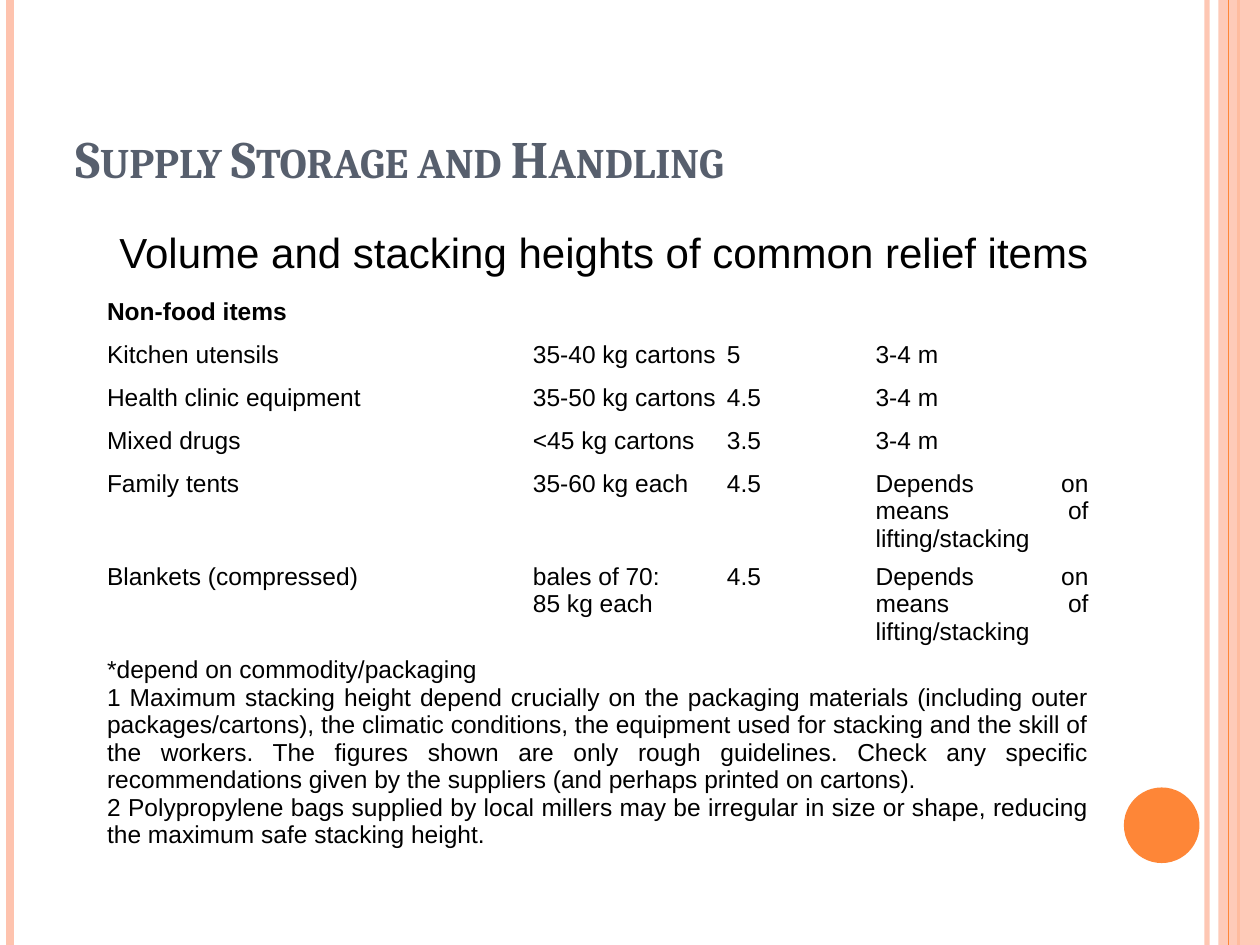
from lxml import etree
from pptx import Presentation
from pptx.dml.color import RGBColor
from pptx.enum.shapes import MSO_CONNECTOR, MSO_SHAPE
from pptx.enum.text import MSO_ANCHOR, PP_ALIGN
from pptx.oxml.ns import qn
from pptx.util import Inches, Pt

LINE = MSO_CONNECTOR.STRAIGHT
RECT, OVAL = MSO_SHAPE.RECTANGLE, MSO_SHAPE.OVAL
TOP, BOTTOM = MSO_ANCHOR.TOP, MSO_ANCHOR.BOTTOM
JUSTIFY = PP_ALIGN.JUSTIFY
PEACH = RGBColor(0xFE, 0xC3, 0xAE)
ORANGE = RGBColor(0xFE, 0x86, 0x37)
SLATE = RGBColor(0x57, 0x5F, 0x6D)
BLACK = RGBColor(0, 0, 0)
WIDE, HIGH = 10, 7.5

# Content
TITLE = "Supply Storage and Handling"
LEAD = "Volume and stacking heights of common relief items"
STACK = "Depends on means of lifting/stacking"
NOTES = [
    "*depend on commodity/packaging",
    "1 Maximum stacking height depend crucially on the packaging materials "
    "(including outer packages/cartons), the climatic conditions, the equipment "
    "used for stacking and the skill of the workers. The figures shown are only "
    "rough guidelines. Check any specific recommendations given by the suppliers "
    "(and perhaps printed on cartons).",
    "2 Polypropylene bags supplied by local millers may be irregular in size or "
    "shape, reducing the maximum safe stacking height.",
]
# One-entry rows span the whole table
ROWS = [
    ["Non-food items"],
    ["Kitchen utensils", "35-40 kg cartons", "5", "3-4 m"],
    ["Health clinic equipment", "35-50 kg cartons", "4.5", "3-4 m"],
    ["Mixed drugs", "<45 kg cartons", "3.5", "3-4 m"],
    ["Family tents", "35-60 kg each", "4.5", STACK],
    ["Blankets (compressed)", "bales of 70:\n85 kg each", "4.5", STACK],
    ["\n".join(NOTES)],
]
COLS = [3.38, 1.54, 1.18, 1.73]
TALL = [0.34] * 4 + [0.62] * 2 + [1.71]

# Edge stripes: x, colour, points, opacity in percent
BACK = [(9.58, PEACH, 3, 93), (0.08, PEACH, 4.5, 100), (9.83, ORANGE, 1.5, 100)]
FRONT = [(9.75, ORANGE, 0.75, 100)]

HEAD = {"name": "Cambria", "size": Pt(30), "bold": True}
BODY = {"name": "Arial", "size": Pt(24), "bold": False}
CELL = {"name": "Arial", "size": Pt(14), "bold": False}


def fade(part, share):
    if share < 100:
        tint = next(part.iter(qn("a:srgbClr")))
        etree.SubElement(tint, qn("a:alpha")).set("val", str(share * 1000))


def stripe(shapes, x, color, width, share):
    line = shapes.add_connector(LINE, Inches(x), 0, Inches(x), Inches(HIGH))
    line.line.color.rgb = color
    line.line.width = Pt(width)
    props = line._element.spPr
    fade(props, share)
    etree.SubElement(props, qn("a:effectLst"))


def block(shapes, kind, box, color, share=100):
    shape = shapes.add_shape(kind, *map(Inches, box))
    shape.shadow.inherit = False
    shape.fill.solid()
    shape.fill.fore_color.rgb = color
    shape.line.fill.background()
    fade(shape._element.spPr, share)


def write(frame, text, style, color):
    frame.text = text
    for para in frame.paragraphs:
        for run in para.runs:
            for key, value in style.items():
                setattr(run.font, key, value)
            run.font.color.rgb = color


def label(shapes, box, text, style, color, anchor):
    frame = shapes.add_textbox(*map(Inches, box)).text_frame
    frame.word_wrap = True
    frame.vertical_anchor = anchor
    write(frame, text, style, color)
    return frame.paragraphs[0]


def grid(shapes, left, top):
    table = shapes.add_table(len(ROWS), len(COLS), Inches(left), Inches(top),
                             Inches(sum(COLS)), Inches(sum(TALL))).table
    table.first_row = table.horz_banding = False
    for col, width in zip(table.columns, COLS):
        col.width = Inches(width)
    for r, (texts, height) in enumerate(zip(ROWS, TALL)):
        table.rows[r].height = Inches(height)
        for cell in table.rows[r].cells:
            cell.fill.background()
        if len(texts) == 1:
            table.cell(r, 0).merge(table.cell(r, len(COLS) - 1))
        for c, text in enumerate(texts):
            cell = table.cell(r, c)
            for side in ("left", "right", "top", "bottom"):
                setattr(cell, "margin_" + side, Inches(0.02))
            write(cell.text_frame, text, {**CELL, "bold": r == 0}, BLACK)
            for para in cell.text_frame.paragraphs:
                para.alignment = JUSTIFY


def main():
    deck = Presentation()
    deck.slide_width, deck.slide_height = Inches(WIDE), Inches(HIGH)
    shapes = deck.slides.add_slide(deck.slide_layouts[6]).shapes

    # Side decoration
    for args in BACK:
        stripe(shapes, *args)
    block(shapes, RECT, (9.67, 0, 0.33, HIGH), PEACH, 87)
    for args in FRONT:
        stripe(shapes, *args)
    block(shapes, OVAL, (8.92, 6.25, 0.6, 0.6), ORANGE)

    # Title in small capitals
    para = label(shapes, (0.5, 0.3, 8.17, 1.25), TITLE, HEAD, SLATE, BOTTOM)
    para.runs[0].font._element.set("cap", "small")

    # Indented lead line
    para = label(shapes, (0.67, 1.75, 8.17, 5.33), LEAD, BODY, BLACK, TOP)
    para.space_before = Pt(6)
    para._p.get_or_add_pPr().set("marL", str(Inches(0.18)))

    # Relief items
    grid(shapes, 0.83, 2.35)
    deck.save("out.pptx")


if __name__ == "__main__":
    main()
